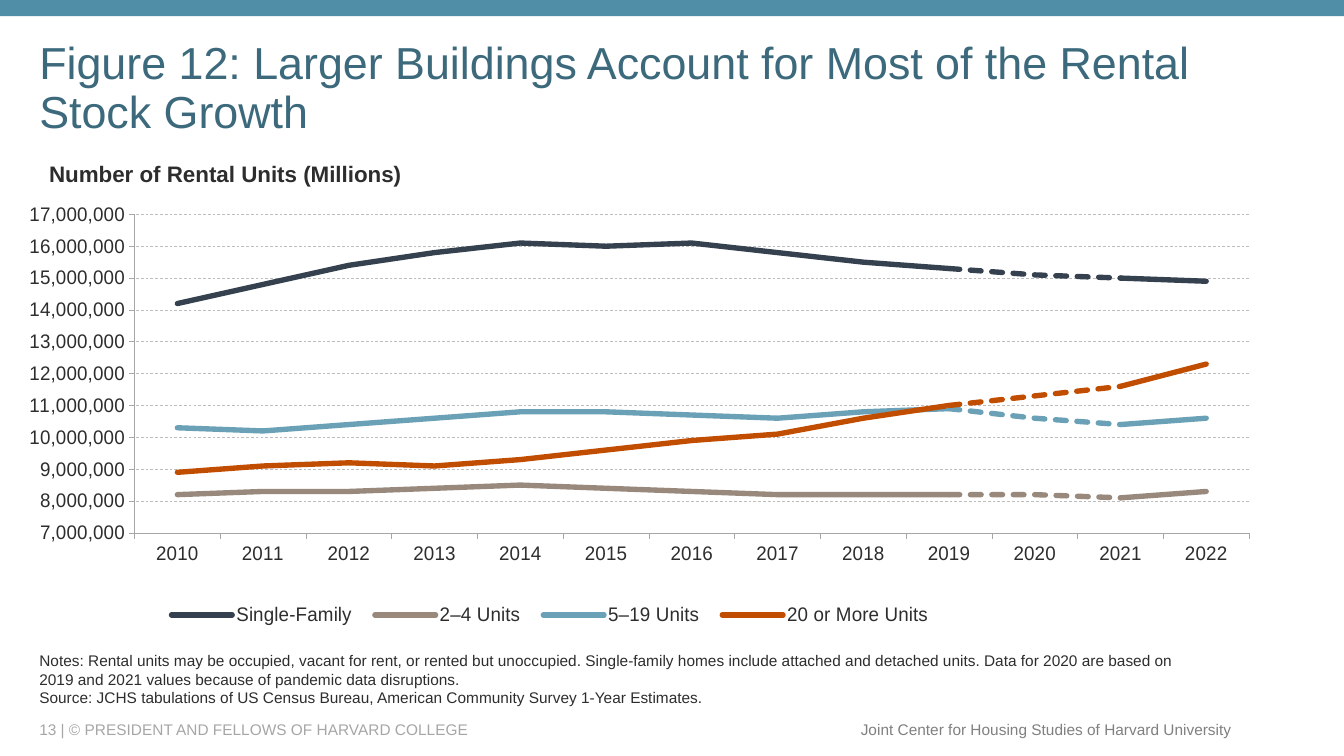
"""Build the slide on rental stock growth by building size."""
from lxml.etree import SubElement
from pptx import Presentation
from pptx.chart.data import CategoryChartData
from pptx.dml.color import RGBColor
from pptx.enum.chart import XL_CHART_TYPE, XL_LEGEND_POSITION, XL_TICK_MARK
from pptx.enum.dml import MSO_LINE
from pptx.enum.shapes import MSO_SHAPE
from pptx.enum.text import MSO_ANCHOR, PP_ALIGN
from pptx.oxml import parse_xml
from pptx.oxml.ns import nsdecls, qn
from pptx.util import Pt

FONT = "Arial"
INK = "2D2D2D"
AXIS_GRAY = "A6A6A6"


def paint(target, color):
    """Give a fill or a font a solid colour."""
    if hasattr(target, "solid"):
        target.solid()
        target.fore_color.rgb = RGBColor.from_string(color)
    else:
        target.color.rgb = RGBColor.from_string(color)


def add_text(text, left, top, width, height, size, color=INK, bold=False,
             align=PP_ALIGN.LEFT, anchor=MSO_ANCHOR.MIDDLE, spacing=1.0):
    """Add a text box with one paragraph per line of text."""
    box = slide.shapes.add_textbox(Pt(left), Pt(top), Pt(width), Pt(height))
    frame = box.text_frame
    frame.word_wrap = True
    frame.vertical_anchor = anchor
    frame.text = text
    for paragraph in frame.paragraphs:
        paragraph.alignment = align
        paragraph.line_spacing = spacing
        paragraph.font.name = FONT
        paragraph.font.size = Pt(size)
        paragraph.font.bold = bold
        paint(paragraph.font, color)


presentation = Presentation()
presentation.slide_width = Pt(960)
presentation.slide_height = Pt(540)
slide = presentation.slides.add_slide(presentation.slide_layouts[6])

top_band = slide.shapes.add_shape(MSO_SHAPE.RECTANGLE, 0, 0, Pt(960), Pt(11.5))
top_band.shadow.inherit = False
top_band.line.fill.background()
paint(top_band.fill, "508DA6")

add_text("13 | © PRESIDENT AND FELLOWS OF HARVARD COLLEGE",
         21, 513.5, 570, 14.5, 11, color=AXIS_GRAY)
add_text("Joint Center for Housing Studies of Harvard University",
         587, 510.5, 300, 21, 11, color="808080", align=PP_ALIGN.RIGHT)

millions_by_type = {
    "Single-Family": ("35414F", [14.2, 14.8, 15.4, 15.8, 16.1, 16.0, 16.1,
                                 15.8, 15.5, 15.3, 15.1, 15.0, 14.9]),
    "2–4 Units": ("98897C", [8.2, 8.3, 8.3, 8.4, 8.5, 8.4, 8.3,
                             8.2, 8.2, 8.2, 8.2, 8.1, 8.3]),
    "5–19 Units": ("6AA1B7", [10.3, 10.2, 10.4, 10.6, 10.8, 10.8, 10.7,
                              10.6, 10.8, 10.9, 10.6, 10.4, 10.6]),
    "20 or More Units": ("C14D00", [8.9, 9.1, 9.2, 9.1, 9.3, 9.6, 9.9,
                                    10.1, 10.6, 11.0, 11.3, 11.6, 12.3]),
}
years = range(2010, 2023)
gap_years = (2019, 2020, 2021)
type_count = len(millions_by_type)

chart_data = CategoryChartData(number_format="#,##0")
chart_data.categories = [str(year) for year in years]
units_by_type = {name: [round(value * 1_000_000) for value in values]
                 for name, (color, values) in millions_by_type.items()}
for name, units in units_by_type.items():
    chart_data.add_series(name, [None if year == 2020 else unit
                                 for year, unit in zip(years, units)])
for number, units in enumerate(units_by_type.values(), start=type_count + 1):
    chart_data.add_series(f"Series {number}", [unit if year in gap_years else None
                                               for year, unit in zip(years, units)])

chart = slide.shapes.add_chart(XL_CHART_TYPE.LINE, Pt(21), Pt(106.5),
                               Pt(893.5), Pt(348.5), chart_data).chart
chart.has_title = False
chart.font.name = FONT
chart.font.size = Pt(10)
paint(chart.font, "5A5A5A")

colors = [color for color, values in millions_by_type.values()]
for index, series in enumerate(chart.plots[0].series):
    series.smooth = False
    line = series.format.line
    line.width = Pt(4)
    paint(line.fill, colors[index % type_count])
    if index >= type_count:
        line.dash_style = MSO_LINE.SQUARE_DOT
    outline = series.format.line._get_or_add_ln()
    outline.set("cap", "rnd")
    SubElement(outline, qn("a:round"))

value_axis = chart.value_axis
value_axis.minimum_scale = 7_000_000
value_axis.maximum_scale = 17_000_000
value_axis.major_unit = 1_000_000
value_axis.tick_labels.number_format = "#,##0"
value_axis.tick_labels.number_format_is_linked = False
value_axis.has_major_gridlines = True
gridline = value_axis.major_gridlines.format.line
gridline.width = Pt(0.5)
paint(gridline.fill, "BDBDBD")
gridline.dash_style = MSO_LINE.DASH
for axis in (value_axis, chart.category_axis):
    axis.major_tick_mark = XL_TICK_MARK.OUTSIDE
    axis.minor_tick_mark = XL_TICK_MARK.NONE
    axis.format.line.width = Pt(0.5)
    paint(axis.format.line.fill, AXIS_GRAY)

chart.has_legend = True
legend = chart.legend
legend.position = XL_LEGEND_POSITION.BOTTOM
legend.include_in_layout = False
for labels in (value_axis.tick_labels, chart.category_axis.tick_labels, legend):
    labels.font.name = FONT
    labels.font.size = Pt(14)
    paint(labels.font, INK)

legend_xml = legend._element
for offset in range(type_count):
    legend_xml.insert(1 + offset, parse_xml(
        f'<c:legendEntry {nsdecls("c")}><c:idx val="{type_count + offset}"/>'
        '<c:delete val="1"/></c:legendEntry>'))

plot_xml = chart._chartSpace.chart.plotArea
for parent, position, target, x, y, width, height in (
        (plot_xml, 0, '<c:layoutTarget val="inner"/>', 0.043, 0.134, 0.931, 0.653),
        (legend_xml, 1 + type_count, "", 0.06, 0.92, 0.66, 0.07)):
    for old_layout in parent.findall(qn("c:layout")):
        parent.remove(old_layout)
    parent.insert(position, parse_xml(
        f'<c:layout {nsdecls("c")}><c:manualLayout>{target}'
        '<c:xMode val="edge"/><c:yMode val="edge"/>'
        f'<c:x val="{x}"/><c:y val="{y}"/><c:w val="{width}"/><c:h val="{height}"/>'
        '</c:manualLayout></c:layout>'))

add_text("Figure 12: Larger Buildings Account for Most of the Rental Stock Growth",
         21, 29, 911, 70, 32, color="3C6A7C", spacing=0.9)
add_text("Notes: Rental units may be occupied, vacant for rent, or rented but "
         "unoccupied. Single-family homes include attached and detached units. "
         "Data for 2020 are based on 2019 and 2021 values because of pandemic "
         "data disruptions.\n"
         "Source: JCHS tabulations of US Census Bureau, American Community Survey "
         "1-Year Estimates.",
         21, 466.5, 846, 42, 11, anchor=MSO_ANCHOR.BOTTOM)
add_text("Number of Rental Units (Millions)", 28, 111, 479.5, 26.5, 16,
         bold=True, anchor=MSO_ANCHOR.TOP)

presentation.save("out.pptx")
